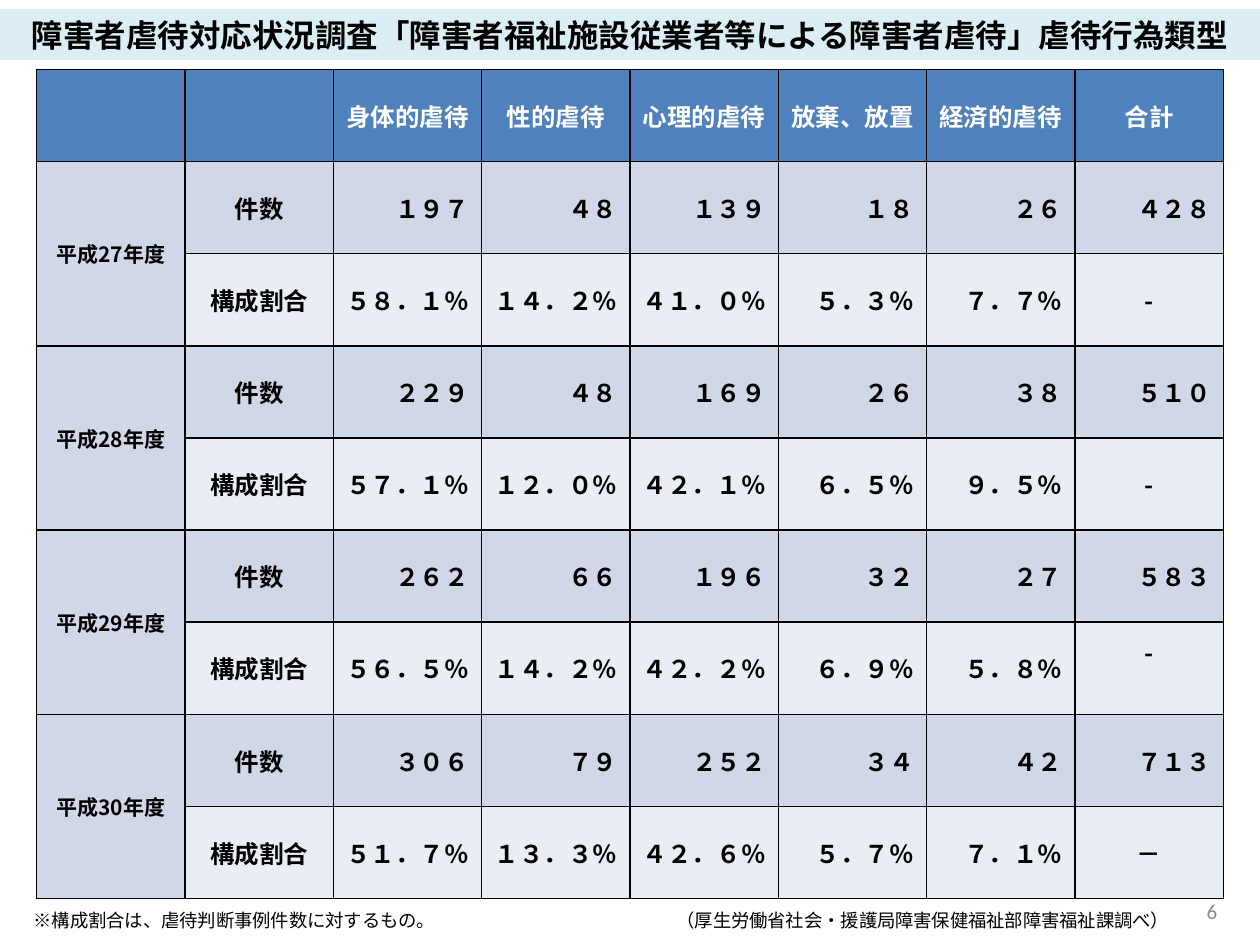
from lxml.etree import SubElement
from pptx import Presentation
from pptx.dml.color import RGBColor
from pptx.enum.shapes import MSO_SHAPE
from pptx.enum.text import MSO_ANCHOR, PP_ALIGN
from pptx.oxml import parse_xml
from pptx.oxml.ns import nsdecls, qn
from pptx.util import Cm, Pt

TITLE = "障害者虐待対応状況調査「障害者福祉施設従業者等による障害者虐待」虐待行為類型"
TYPES = ["身体的虐待", "性的虐待", "心理的虐待", "放棄、放置", "経済的虐待", "合計"]
YEARS = [  # year, counts, shares
    ("平成27年度", ["１９７", "４８", "１３９", "１８", "２６", "４２８"],
     ["５８．１％", "１４．２％", "４１．０％", "５．３％", "７．７％", "-"]),
    ("平成28年度", ["２２９", "４８", "１６９", "２６", "３８", "５１０"],
     ["５７．１％", "１２．０％", "４２．１％", "６．５％", "９．５％", "-"]),
    ("平成29年度", ["２６２", "６６", "１９６", "３２", "２７", "５８３"],
     ["５６．５％", "１４．２％", "４２．２％", "６．９％", "５．８％", "-"]),
    ("平成30年度", ["３０６", "７９", "２５２", "３４", "４２", "７１３"],
     ["５１．７％", "１３．３％", "４２．６％", "５．７％", "７．１％", "－"]),
]
NOTE = "※構成割合は、虐待判断事例件数に対するもの。"
SOURCE = "（厚生労働省社会・援護局障害保健福祉部障害福祉課調べ）"
PAGE = "6"

JP_FONT = "Noto Sans CJK JP"
BLACK = RGBColor(0x00, 0x00, 0x00)
WHITE = RGBColor(0xFF, 0xFF, 0xFF)
GRAY = RGBColor(0x8C, 0x8C, 0x8C)
TITLE_FILL = RGBColor(0xDB, 0xEE, 0xF4)
HEADER_FILL = RGBColor(0x4F, 0x81, 0xBD)
COUNT_FILL = RGBColor(0xD0, 0xD8, 0xE8)
SHARE_FILL = RGBColor(0xE9, 0xED, 0xF4)


def write(tf, text, size, color=BLACK, align=PP_ALIGN.CENTER, bold=False, font=JP_FONT):
    p = tf.paragraphs[0]
    p.text = text
    p.alignment = align
    p.font.size, p.font.bold, p.font.name = Pt(size), bold, font
    p.font.color.rgb = color
    char_props = p._p.get_or_add_pPr().get_or_add_defRPr()
    SubElement(char_props, qn("a:ea"), typeface=font)
    return p


def add_text(s, left, top, width, height):
    tf = s.shapes.add_textbox(Cm(left), Cm(top), Cm(width), Cm(height)).text_frame
    tf.word_wrap = True
    return tf


def set_borders(cell):
    tc_pr = cell._tc.get_or_add_tcPr()
    for i, side in enumerate(("lnL", "lnR", "lnT", "lnB")):
        tc_pr.insert(i, parse_xml(
            f'<a:{side} {nsdecls("a")} w="12700"><a:solidFill>'
            f'<a:srgbClr val="{BLACK}"/></a:solidFill></a:{side}>'))


def fill_cell(cell, text, fill, size=14, color=BLACK, align=PP_ALIGN.CENTER):
    cell.fill.solid()
    cell.fill.fore_color.rgb = fill
    cell.vertical_anchor = MSO_ANCHOR.MIDDLE
    write(cell.text_frame, text, size, color, align, bold=True)
    set_borders(cell)


def add_abuse_table(s):
    rows, cols = 1 + 2 * len(YEARS), 2 + len(TYPES)
    table = s.shapes.add_table(rows, cols, Cm(0.74), Cm(1.4), Cm(23.92), Cm(16.72)).table
    for col, text in enumerate(["", ""] + TYPES):
        fill_cell(table.cell(0, col), text, HEADER_FILL, color=WHITE)
    for i, (year, counts, shares) in enumerate(YEARS):
        top = 1 + 2 * i
        fill_cell(table.cell(top, 0), year, COUNT_FILL, size=12)
        fill_cell(table.cell(top + 1, 0), "", COUNT_FILL, size=12)
        table.cell(top, 0).merge(table.cell(top + 1, 0))
        for row, label, values, fill in ((top, "件数", counts, COUNT_FILL),
                                         (top + 1, "構成割合", shares, SHARE_FILL)):
            fill_cell(table.cell(row, 1), label, fill)
            for col, value in enumerate(values, start=2):
                align = PP_ALIGN.CENTER if value in "-－" else PP_ALIGN.RIGHT
                fill_cell(table.cell(row, col), value, fill, align=align)
    # The dash for 平成29年度 sits a little above the middle
    table.cell(6, cols - 1).margin_bottom = Cm(0.78)


prs = Presentation()
prs.slide_width, prs.slide_height = Cm(25.4), Cm(19.05)
s = prs.slides.add_slide(prs.slide_layouts[6])

add_abuse_table(s)

band = s.shapes.add_shape(MSO_SHAPE.RECTANGLE, 0, Cm(0.18), Cm(25.4), Cm(1.03))
band.shadow.inherit = False
band.fill.solid()
band.fill.fore_color.rgb = TITLE_FILL
band.line.fill.background()
band.text_frame.word_wrap = True
write(band.text_frame, TITLE, 18, bold=True)

p = write(add_text(s, 0.43, 18.21, 24.41, 0.71), f"{NOTE}\t{SOURCE}", 10.5, align=PP_ALIGN.LEFT)
tabs = parse_xml(f'<a:tabLst {nsdecls("a")}><a:tab pos="{Cm(12.96)}" algn="l"/></a:tabLst>')
p._p.pPr.insert(0, tabs)

tf = add_text(s, 18.87, 17.86, 5.92, 1.02)
tf.vertical_anchor = MSO_ANCHOR.MIDDLE
write(tf, PAGE, 12, GRAY, PP_ALIGN.RIGHT, font="Calibri")

prs.save("out.pptx")
